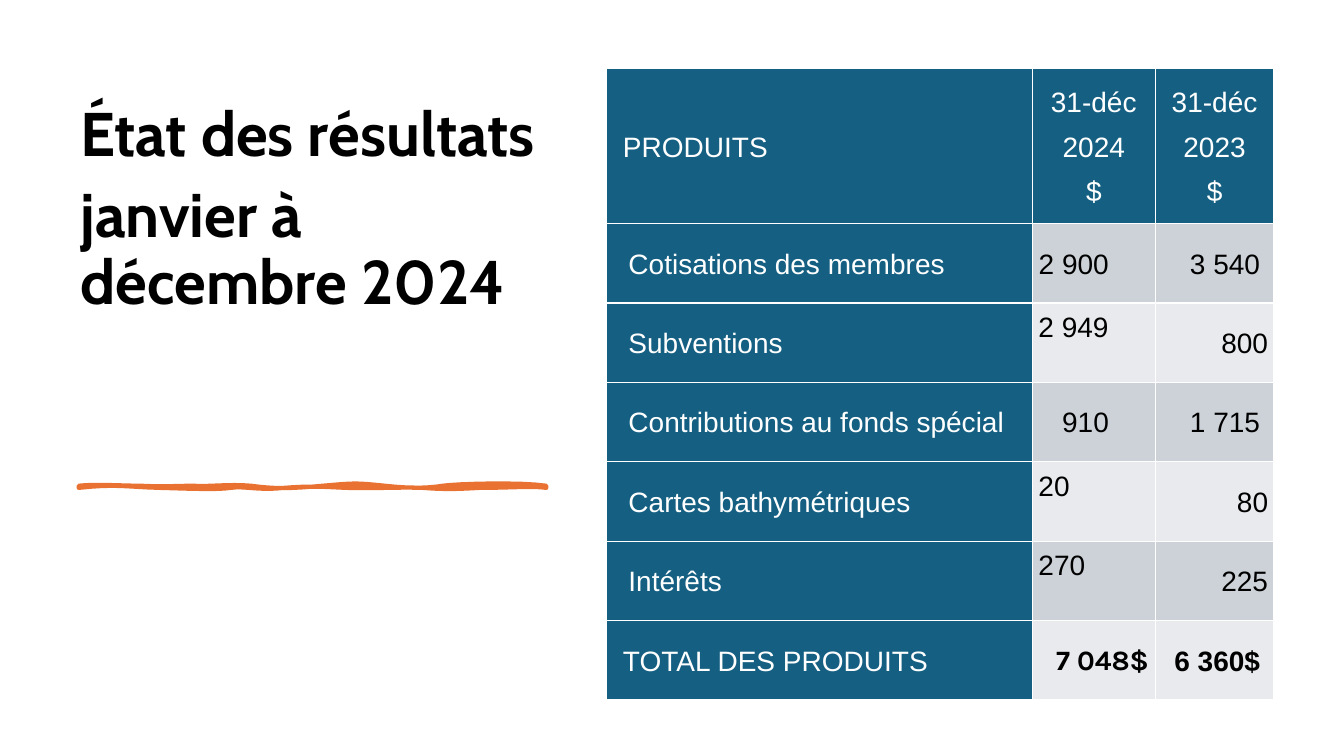
import pptx
import pptx.util
import pptx.dml.color
import pptx.enum.text
import pptx.oxml
from dataclasses import dataclass
from lxml import etree

Pt = pptx.util.Pt
RGB = pptx.dml.color.RGBColor.from_string
ALIGN = pptx.enum.text.PP_ALIGN
MIDDLE = pptx.enum.text.MSO_ANCHOR.MIDDLE
NS = "http://schemas.openxmlformats.org/drawingml/2006/main"


@dataclass(frozen=True)
class Theme:
    ink: str = "000000"
    white: str = "FFFFFF"
    blue: str = "156082"
    orange: str = "E97132"
    bands: tuple = ("CCD2D8", "E8EAED")
    title_font: str = "Cabin"
    body_font: str = "Arial"
    total_font: str = "Karla"
    title_size: int = 44
    body_size: int = 20


T = Theme()

TITLE = ["État des résultats", "janvier à décembre 2024"]
HEADER = ["PRODUITS", "31-déc\n2024\n$", "31-déc\n2023\n$"]
TOTAL = ["TOTAL DES PRODUITS", "7 048$", "6 360$"]

CELL = dict(left=4.3, right=4.3, bottom=0)
HEADING = dict(left=11.5)
LABEL = dict(left=15.4)
AMOUNT = dict(align=ALIGN.RIGHT, color=T.ink)
FLUSH = AMOUNT
SPACED = dict(AMOUNT, right=10)
INSET = dict(AMOUNT, right=33)
RAISED = dict(color=T.ink, bottom=23)

# label, 2024 amount and its placement, 2023 amount and its placement
INCOME = [
    ("Cotisations des membres", "2 900", INSET, "3 540", SPACED),
    ("Subventions", "2 949", RAISED, "800", FLUSH),
    ("Contributions au fonds spécial", "910", INSET, "1 715", SPACED),
    ("Cartes bathymétriques", "20", RAISED, "80", FLUSH),
    ("Intérêts", "270", RAISED, "225", FLUSH),
]

# Each edge: a start point, then Bézier triples (two controls and an end)
BRUSH_TOP = [
    (56.2, 347),
    (68.4, 345.6), (86.4, 347), (100.8, 347),
    (115.2, 347.8), (127.4, 347), (138.2, 347),
    (149, 347.8), (163.4, 345.6), (179.3, 347),
    (195.8, 349.2), (206.6, 349.2), (230.4, 347),
    (254.2, 344.9), (254.2, 344.9), (275, 347),
    (295.2, 349.2), (306.7, 348.5), (316.1, 347),
    (325.4, 345.6), (372.2, 344.2), (390.2, 347),
]
BRUSH_BOTTOM = [
    (390.2, 348.5),
    (380.2, 347), (365.8, 348.5), (342.7, 348.5),
    (319.7, 349.9), (312.5, 349.2), (301.7, 348.5),
    (290.9, 347.8), (262.8, 349.2), (247, 348.5),
    (231.8, 347.8), (221, 347), (203, 348.5),
    (185, 350.6), (174.2, 347), (164.9, 348.5),
    (155.5, 349.9), (138.2, 349.2), (113.8, 348.5),
    (89.3, 347.8), (82.8, 345.6), (56.2, 348.5),
]


def format_runs(p, font, size, color, bold=False):
    for r in p.runs:
        r.font.name = font
        r.font.size = Pt(size)
        r.font.bold = bold
        r.font.color.rgb = RGB(color)


def add_title(s):
    tf = s.shapes.add_textbox(Pt(50.4), Pt(70.6), Pt(360), Pt(124)).text_frame
    tf.word_wrap = True
    tf.text = "\n".join(TITLE)
    for p in tf.paragraphs:
        p.line_spacing = 0.9
        p.space_before = Pt(10)
        format_runs(p, T.title_font, T.title_size, T.ink, bold=True)


def flatten(edge, steps=8):
    """Return the points of a chain of cubic Bézier curves."""
    points = [edge[0]]
    for i in range(0, len(edge) - 1, 3):
        a, b, c, d = edge[i:i + 4]
        for t in (k / steps for k in range(1, steps + 1)):
            u = 1 - t
            points.append(tuple(
                u**3 * a[j] + 3 * u * u * t * b[j] + 3 * u * t * t * c[j] + t**3 * d[j]
                for j in (0, 1)))
    return points


def add_brush_line(s):
    points = [(Pt(x), Pt(y)) for x, y in flatten(BRUSH_TOP) + flatten(BRUSH_BOTTOM)]
    builder = s.shapes.build_freeform(*points[0], scale=1.0)
    builder.add_line_segments(points[1:], close=True)
    sp = builder.convert_to_shape()
    sp.shadow.inherit = False
    sp.fill.solid()
    sp.fill.fore_color.rgb = RGB(T.orange)
    sp.line.color.rgb = RGB(T.orange)
    sp.line.width = Pt(3)
    etree.SubElement(sp.line._get_or_add_ln(), f"{{{NS}}}round")


def add_borders(cell):
    tcPr = cell._tc.get_or_add_tcPr()
    for side in "LRTB":
        tcPr.append(pptx.oxml.parse_xml(
            f'<a:ln{side} xmlns:a="{NS}" w="{Pt(1)}"><a:solidFill>'
            f'<a:srgbClr val="{T.white}"/></a:solidFill></a:ln{side}>'))


def fill_cell(cell, text, fill, align=ALIGN.LEFT, color=T.white,
              font=T.body_font, bold=False, **margins):
    add_borders(cell)
    cell.fill.solid()
    cell.fill.fore_color.rgb = RGB(fill)
    cell.vertical_anchor = MIDDLE
    m = {**CELL, **margins}
    cell.margin_left, cell.margin_right = Pt(m["left"]), Pt(m["right"])
    cell.margin_top, cell.margin_bottom = Pt(0), Pt(m["bottom"])
    cell.text_frame.text = text
    for p in cell.text_frame.paragraphs:
        p.alignment = align
        p.line_spacing = 1.07
        p.space_after = Pt(8)
        format_runs(p, font, T.body_size, color, bold)


def add_income_table(s):
    widths, heights = [304, 87.6, 85], [110.6] + [56.7] * 6
    frame = s.shapes.add_table(len(heights), len(widths), Pt(433.5), Pt(49.2),
                               Pt(sum(widths)), Pt(sum(heights)))
    table = frame.table
    for column, width in zip(table.columns, widths):
        column.width = Pt(width)
    for row, height in zip(table.rows, heights):
        row.height = Pt(height)

    centred = dict(align=ALIGN.CENTER)
    rows = [list(zip(HEADER, (HEADING, centred, centred)))]
    for label, now, now_style, before, before_style in INCOME:
        rows.append([(label, LABEL), (now, now_style), (before, before_style)])
    rows.append(list(zip(TOTAL, (HEADING,
                                 dict(FLUSH, font=T.total_font, bold=True),
                                 dict(SPACED, bold=True)))))

    for i, row in enumerate(rows):
        for j, (text, style) in enumerate(row):
            fill = T.blue if i == 0 or j == 0 else T.bands[(i - 1) % 2]
            fill_cell(table.cell(i, j), text, fill, **style)


def main():
    prs = pptx.Presentation()
    prs.slide_width, prs.slide_height = Pt(960), Pt(540)
    s = prs.slides.add_slide(prs.slide_layouts[6])
    add_title(s)
    add_brush_line(s)
    add_income_table(s)
    prs.save("out.pptx")


if __name__ == "__main__":
    main()
